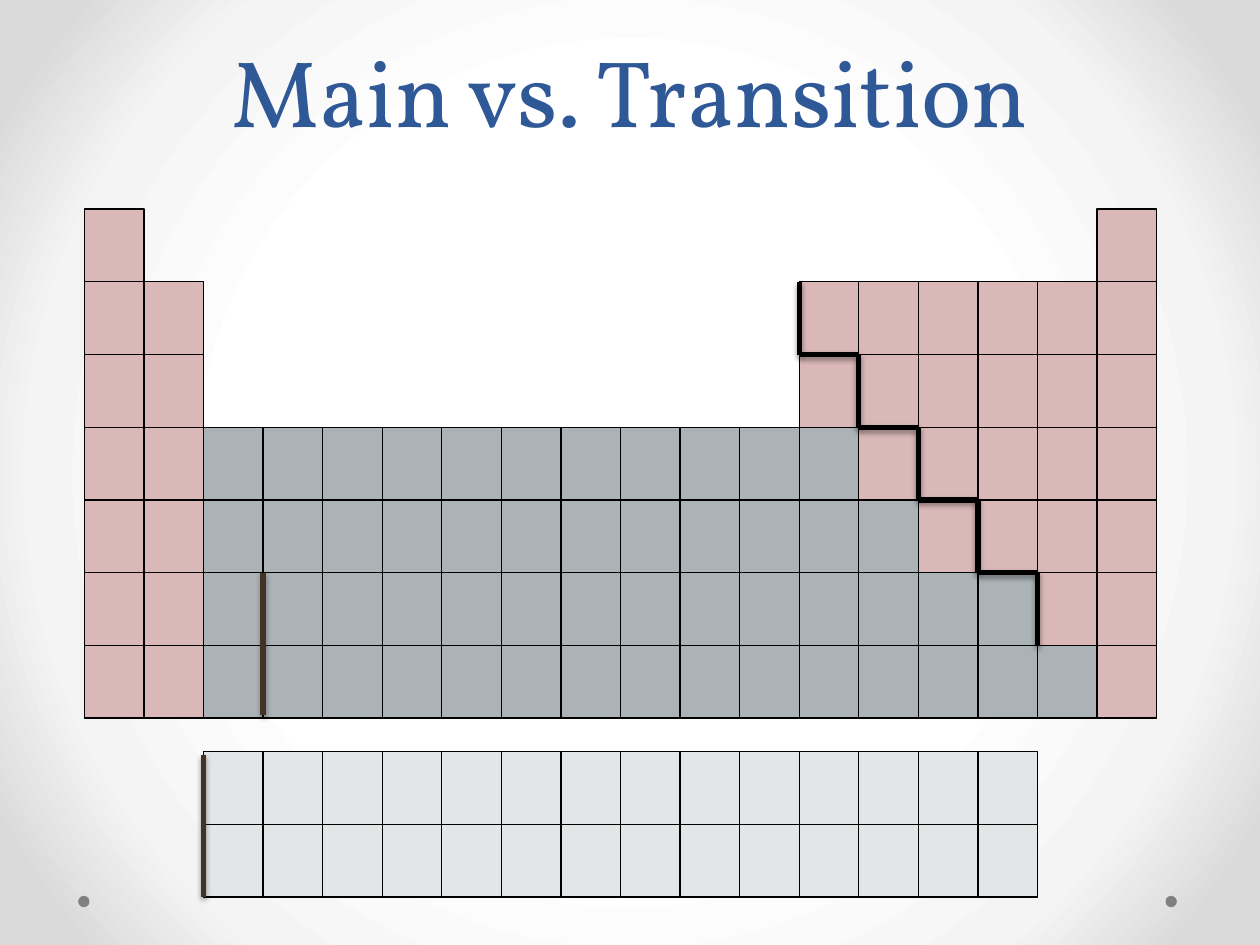
from pptx import Presentation
from pptx.dml.color import RGBColor
from pptx.enum.shapes import MSO_CONNECTOR, MSO_SHAPE
from pptx.enum.text import MSO_ANCHOR, MSO_AUTO_SIZE, PP_ALIGN
from pptx.oxml import parse_xml
from pptx.oxml.ns import nsdecls
from pptx.util import Inches, Pt

RECTANGLE = MSO_SHAPE.RECTANGLE
OVAL = MSO_SHAPE.OVAL
STRAIGHT = MSO_CONNECTOR.STRAIGHT
CENTER = PP_ALIGN.CENTER
BOTTOM = MSO_ANCHOR.BOTTOM
NO_AUTOFIT = MSO_AUTO_SIZE.NONE

SLIDE_WIDTH, SLIDE_HEIGHT = 10, 7.5
GRID_LEFT, GRID_TOP = 0.67, 1.66
CELL_WIDTH, CELL_HEIGHT = 8.51 / 18, 4.04 / 7
INNER_ROW = 7.46
STAIR_COLUMN, STAIR_ROW, STAIR_STEPS = 12, 1, 5

COLORS = {
    "title": "2F5897",
    "main": "DAB8B8",
    "transition": "ACB3B6",
    "inner": "E3E6E7",
    "outline": "000000",
    "marker": "423324",
    "dot": "808080",
}
BACKDROP = {50: "FFFFFF", 76: "F4F4F4", 92: "DADADA"}

PERIODS = [
    [("main", 0, 1), ("main", 17, 18)],
    [("main", 0, 2), ("main", 12, 18)],
    [("main", 0, 2), ("main", 12, 18)],
    [("main", 0, 2), ("transition", 2, 13), ("main", 13, 18)],
    [("main", 0, 2), ("transition", 2, 14), ("main", 14, 18)],
    [("main", 0, 2), ("transition", 2, 16), ("main", 16, 18)],
    [("main", 0, 2), ("transition", 2, 17), ("main", 17, 18)],
]


def color(name):
    return RGBColor.from_string(COLORS[name])


def grid_point(column, row):
    return (Inches(GRID_LEFT + column * CELL_WIDTH),
            Inches(GRID_TOP + row * CELL_HEIGHT))


def paint_background(page):
    stops = "".join(
        f'<a:gs pos="{share * 1000}"><a:srgbClr val="{shade}"/></a:gs>'
        for share, shade in BACKDROP.items())
    page._element.cSld.insert(0, parse_xml(
        f'<p:bg {nsdecls("p", "a")}><p:bgPr><a:gradFill rotWithShape="1">'
        f'<a:gsLst>{stops}</a:gsLst><a:path path="circle">'
        '<a:fillToRect l="50000" t="50000" r="50000" b="50000"/></a:path>'
        '</a:gradFill><a:effectLst/></p:bgPr></p:bg>'))


def write_text(frame, text, *, size, font, fill, align, spacing):
    para = frame.paragraphs[0]
    para.alignment = align
    para.line_spacing = Pt(spacing)
    span = para.add_run()
    span.text = text
    span.font.size = Pt(size)
    span.font.name = font
    span.font.color.rgb = color(fill)


def add_title(page, text):
    box = page.shapes.title
    box.left, box.top = Inches(0.05 * SLIDE_WIDTH), Inches(0.01)
    box.width, box.height = Inches(0.9 * SLIDE_WIDTH), Inches(0.16 * SLIDE_HEIGHT)
    frame = box.text_frame
    frame.auto_size = NO_AUTOFIT
    frame.vertical_anchor = BOTTOM
    write_text(frame, text, size=54, font="Vollkorn", fill="title",
               align=CENTER, spacing=58)


def add_dot(page, left):
    dot = page.shapes.add_shape(OVAL, Inches(left), Inches(7.11),
                                Inches(0.09), Inches(0.09))
    dot.shadow.inherit = False
    dot.fill.solid()
    dot.fill.fore_color.rgb = color("dot")
    dot.line.fill.background()


def add_cells(shapes, kind, row, first, end):
    for column in range(first, end):
        cell = shapes.add_shape(RECTANGLE, *grid_point(column, row),
                                Inches(CELL_WIDTH), Inches(CELL_HEIGHT))
        cell.shadow.inherit = False
        cell.fill.solid()
        cell.fill.fore_color.rgb = color(kind)
        cell.line.color.rgb = color("outline")
        cell.line.width = Pt(0.75)


def add_rule(shapes, start, end, name):
    rule = shapes.add_connector(STRAIGHT, *grid_point(*start), *grid_point(*end))
    rule.line.color.rgb = color(name)
    rule.line.width = Pt(3)
    rule._element.spPr.append(parse_xml(
        f'<a:effectLst {nsdecls("a")}>'
        f'<a:outerShdw blurRad="{Pt(3.1)}" dist="{Pt(1.6)}" dir="5400000" '
        'rotWithShape="0"><a:srgbClr val="000000"><a:alpha val="38000"/>'
        '</a:srgbClr></a:outerShdw></a:effectLst>'))


def add_staircase(shapes):
    for step in range(STAIR_STEPS):
        column, row = STAIR_COLUMN + step, STAIR_ROW + step
        add_rule(shapes, (column, row), (column, row + 1), "outline")
        if step < STAIR_STEPS - 1:
            add_rule(shapes, (column, row + 1), (column + 1, row + 1), "outline")


def main():
    deck = Presentation()
    deck.slide_width, deck.slide_height = Inches(SLIDE_WIDTH), Inches(SLIDE_HEIGHT)
    page = deck.slides.add_slide(deck.slide_layouts[5])
    paint_background(page)
    add_title(page, "Main vs. Transition")
    for left in (9.25, 0.62):
        add_dot(page, left)
    table = page.shapes.add_group_shape().shapes
    for row, blocks in enumerate(PERIODS):
        for kind, first, end in blocks:
            add_cells(table, kind, row, first, end)
    for row in (INNER_ROW, INNER_ROW + 1):
        add_cells(table, "inner", row, 2, 16)
    add_staircase(table)
    add_rule(page.shapes, (3, 5), (3, 6.95), "marker")
    add_rule(page.shapes, (2, 7.5), (2, 9.46), "marker")
    deck.save("out.pptx")


if __name__ == "__main__":
    main()
